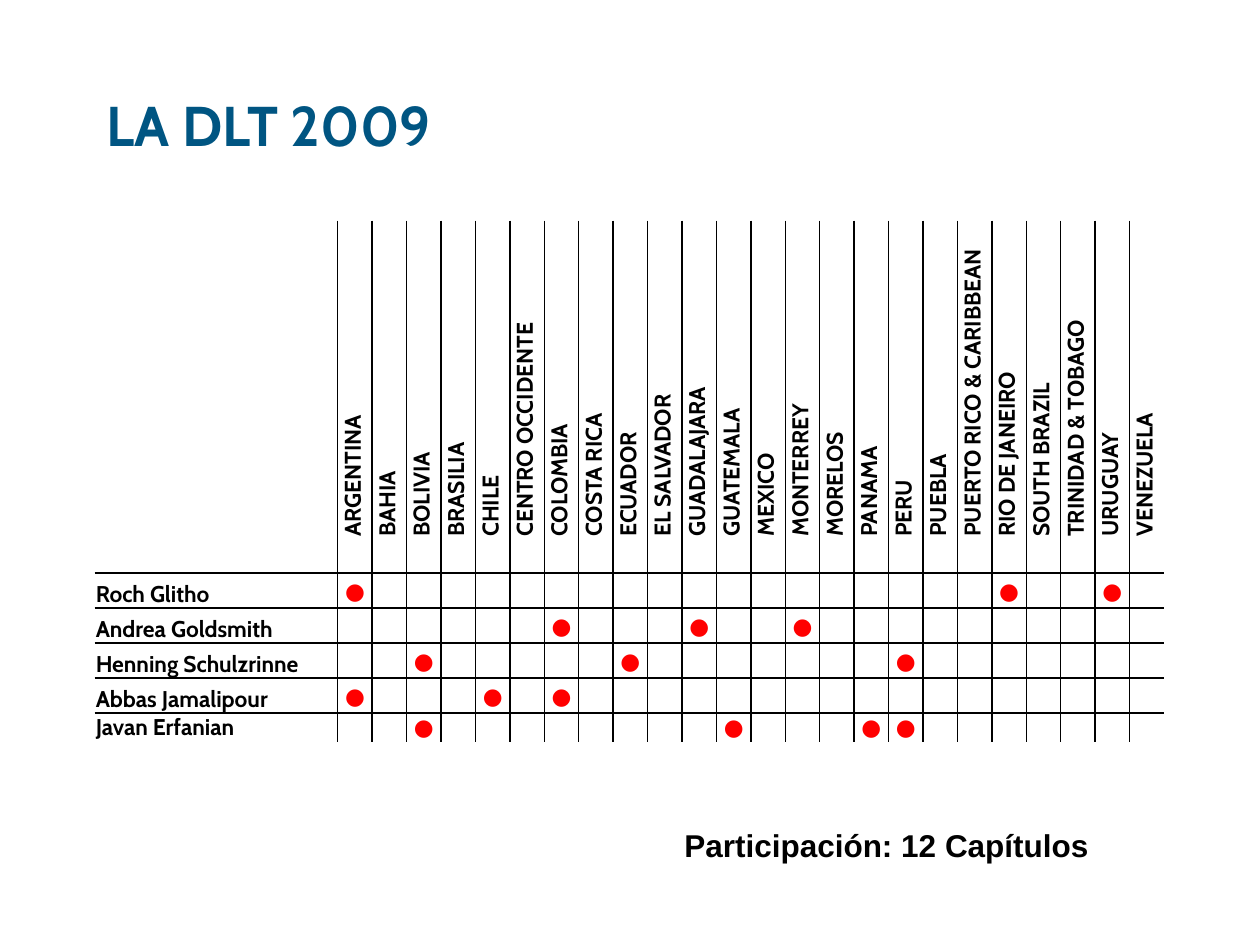
from lxml import etree
from pptx import Presentation
from pptx.dml.color import RGBColor
from pptx.enum.text import MSO_ANCHOR, PP_ALIGN
from pptx.oxml.ns import qn
from pptx.util import Pt

TOP = MSO_ANCHOR.TOP
MIDDLE = MSO_ANCHOR.MIDDLE
BOTTOM = MSO_ANCHOR.BOTTOM
CENTER = PP_ALIGN.CENTER
NO_GRID_STYLE = "{2D5ABB26-0587-4C30-8999-92F81FD0307C}"
COLORS = {"title": "005582", "text": "000000", "dot": "FF0000", "line": "000000"}

CHAPTERS = [
    "ARGENTINA", "BAHIA", "BOLIVIA", "BRASILIA", "CHILE", "CENTRO OCCIDENTE",
    "COLOMBIA", "COSTA RICA", "ECUADOR", "EL SALVADOR", "GUADALAJARA",
    "GUATEMALA", "MEXICO", "MONTERREY", "MORELOS", "PANAMA", "PERU", "PUEBLA",
    "PUERTO RICO & CARIBBEAN", "RIO DE JANEIRO", "SOUTH BRAZIL",
    "TRINIDAD & TOBAGO", "URUGUAY", "VENEZUELA",
]
LECTURERS = [
    ("Roch Glitho", ["ARGENTINA", "RIO DE JANEIRO", "URUGUAY"]),
    ("Andrea Goldsmith", ["COLOMBIA", "GUADALAJARA", "MONTERREY"]),
    ("Henning Schulzrinne", ["BOLIVIA", "ECUADOR", "PERU"]),
    ("Abbas Jamalipour", ["ARGENTINA", "CHILE", "COLOMBIA"]),
    ("Javan Erfanian", ["BOLIVIA", "GUATEMALA", "PANAMA", "PERU"]),
]


def write(paragraph, text, size, font, color):
    run = paragraph.add_run()
    run.text = text
    run.font.size = Pt(size)
    run.font.name = font
    run.font.bold = True
    run.font.color.rgb = RGBColor.from_string(COLORS[color])


def add_borders(cell, sides):
    properties = cell._tc.get_or_add_tcPr()
    for index, side in enumerate(sides):
        line = etree.Element(qn(f"a:ln{side}"), w=str(Pt(1)))
        fill = etree.SubElement(line, qn("a:solidFill"))
        etree.SubElement(fill, qn("a:srgbClr"), val=COLORS["line"])
        properties.insert(index, line)


presentation = Presentation()
presentation.slide_width = Pt(720)
presentation.slide_height = Pt(540)
slide = presentation.slides.add_slide(presentation.slide_layouts[6])

title = slide.shapes.add_textbox(Pt(54), Pt(48), Pt(612), Pt(90))
title.text_frame.word_wrap = True
title.text_frame.vertical_anchor = TOP
write(title.text_frame.paragraphs[0], "LA DLT 2009", 32, "Cabin", "title")

row_heights = [181.4] + [20] * 5 + [16.5]
column_widths = [139] + [19.7] * len(CHAPTERS)
last_row = len(row_heights) - 1
last_column = len(column_widths) - 1
frame = slide.shapes.add_table(
    len(row_heights), len(column_widths),
    Pt(54), Pt(126), Pt(sum(column_widths)), Pt(sum(row_heights)),
)
table = frame.table
table.first_row = False
table.horz_banding = False
table._tbl.tblPr.find(qn("a:tableStyleId")).text = NO_GRID_STYLE
for row, height in zip(table.rows, row_heights):
    row.height = Pt(height)
for column, width in zip(table.columns, column_widths):
    column.width = Pt(width)

for row_index in range(last_row + 1):
    for column_index in range(last_column + 1):
        cell = table.cell(row_index, column_index)
        cell.margin_left = cell.margin_right = cell.margin_top = Pt(0.75)
        cell.margin_bottom = Pt(0)
        cell.fill.background()
        cell.vertical_anchor = BOTTOM
        paragraph = cell.text_frame.paragraphs[0]
        text, color = "", "text"
        if row_index == 0 and column_index > 0:
            text = CHAPTERS[column_index - 1]
            cell._tc.get_or_add_tcPr().set("vert", "vert270")
        elif row_index > 1:
            lecturer, visited = LECTURERS[row_index - 2]
            if column_index == 0:
                text = lecturer
            elif CHAPTERS[column_index - 1] in visited:
                text, color = "●", "dot"
                cell.vertical_anchor = MIDDLE
                paragraph.alignment = CENTER
        if text:
            write(paragraph, text, 13, "Cabin", color)
        else:
            ending = etree.SubElement(paragraph._p, qn("a:endParaRPr"), sz="1300")
            etree.SubElement(ending, qn("a:latin"), typeface="Cabin")

        sides = []
        if column_index > 0:
            sides.append("L")
        if column_index < last_column:
            sides.append("R")
        if row_index > 1:
            sides.append("T")
        if 0 < row_index < last_row:
            sides.append("B")
        add_borders(cell, sides)

summary = slide.shapes.add_textbox(Pt(384), Pt(468.7), Pt(247.7), Pt(29))
summary.text_frame.word_wrap = False
write(summary.text_frame.paragraphs[0], "Participación: 12 Capítulos", 18, "Arial", "text")

presentation.save("out.pptx")
